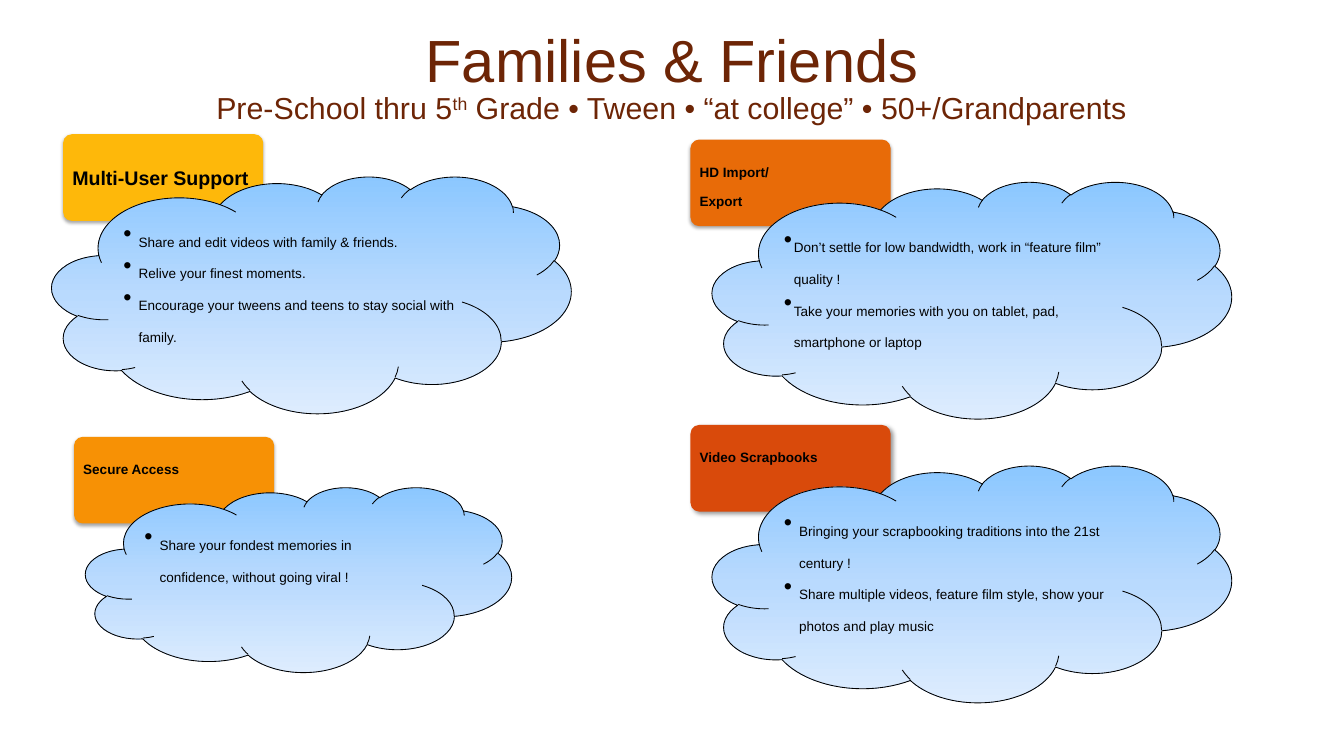
from copy import deepcopy

from lxml.etree import SubElement
from pptx import Presentation
from pptx.dml.color import RGBColor
from pptx.enum.shapes import MSO_SHAPE as Shape
from pptx.enum.text import MSO_ANCHOR as Anchor, MSO_AUTO_SIZE as AutoSize, PP_ALIGN as Align
from pptx.oxml.ns import qn
from pptx.util import Cm, Pt

FONT = "Arial"
BLACK, BROWN = "000000", "6D2506"
CLOUD_STOPS = ["8BC7FF", "B9DAFE", "DDECFE"]
CARD_SIZE = (6.05, 2.62)
LARGE, SMALL = (15.7, 7.16), (12.88, 5.59)
SUBSCRIPT, SUPERSCRIPT = -25, 30
SOFT = dict(blur=3.1, distance=1.8, angle=90, opacity=35)
ANGLED = dict(blur=4, distance=3, angle=45, opacity=40)

# Each title run: text, size in points, baseline shift in percent
TITLE = [
    ("Families & Friends\n", 51, 0),
    ("Pre-School thru 5", 26, 0),
    ("th", 26, SUPERSCRIPT),
    (" Grade • Tween • “at college” • 50+/Grandparents", 26, 0),
]

TOPICS = [
    dict(label="Multi-User Support", label_size=29, color="FEB80A", shadow=SOFT,
         card=(1.91, 4.06), cloud=(1.57, 5.33), cloud_size=LARGE, indent=0.46,
         points=["Share and edit videos with family & friends.",
                 "Relive your finest moments.",
                 "Encourage your tweens and teens to stay social with family."]),
    dict(label="Secure Access", label_size=20, color="F79105", shadow=SOFT,
         card=(2.24, 13.21), cloud=(2.59, 14.73), cloud_size=SMALL, indent=0.46,
         points=["Share your fondest memories in confidence, without going viral !"]),
    dict(label="HD Import/\nExport", label_size=20, color="E86B08", shadow=SOFT,
         card=(20.88, 4.22), cloud=(21.54, 5.49), cloud_size=LARGE, indent=0.3,
         points=["Don’t settle for low bandwidth, work in “feature film” quality !",
                 "Take your memories with you on tablet, pad, smartphone or laptop"]),
    dict(label="Video Scrapbooks", label_size=20, color="D94A0B", shadow=ANGLED,
         card=(20.88, 12.85), cloud=(21.54, 14.07), cloud_size=LARGE, indent=0.46,
         points=["Bringing your scrapbooking traditions into the 21st century !",
                 "Share multiple videos, feature film style, show your photos and play music"]),
]


def rgb(color):
    return RGBColor.from_string(color)


def add_text(paragraph, text, size=20, color=BLACK, bold=False, baseline=0):
    """Add runs to the paragraph, with a line break at each newline."""
    for index, line in enumerate(text.split("\n")):
        if index:
            paragraph.add_line_break()
        if not line:
            continue
        run = paragraph.add_run()
        run.text = line
        run.font.name, run.font.size, run.font.bold = FONT, Pt(size), bold
        run.font.color.rgb = rgb(color)
        if baseline:
            run._r.get_or_add_rPr().set("baseline", str(baseline * 1000))


def set_frame(shape, anchor, left, top, right, bottom):
    frame = shape.text_frame
    frame.word_wrap, frame.auto_size = True, AutoSize.NONE
    frame.vertical_anchor = anchor
    frame.margin_left, frame.margin_top = Cm(left), Cm(top)
    frame.margin_right, frame.margin_bottom = Cm(right), Cm(bottom)
    return frame


def add_bullet(paragraph, indent):
    properties = paragraph._p.get_or_add_pPr()
    properties.set("marL", str(Cm(indent)))
    properties.set("indent", str(-Cm(indent)))
    SubElement(properties, qn("a:buFont"), typeface=FONT)
    SubElement(properties, qn("a:buChar"), char="•")


def add_shadow(shape, blur, distance, angle, opacity):
    shape.shadow.inherit = False
    effects = shape._element.spPr.find(qn("a:effectLst"))
    shadow = SubElement(effects, qn("a:outerShdw"), blurRad=str(Pt(blur)),
                        dist=str(Pt(distance)), dir=str(angle * 60000), rotWithShape="0")
    color = SubElement(shadow, qn("a:srgbClr"), val=BLACK)
    SubElement(color, qn("a:alpha"), val=str(opacity * 1000))


def fill_gradient(shape, colors):
    """Fill from top to bottom with evenly spaced colours."""
    shape.fill.gradient()
    shape.fill.gradient_angle = 270
    stop_list = shape._element.spPr.find(".//" + qn("a:gsLst"))
    while len(stop_list) < len(colors):
        stop_list.append(deepcopy(stop_list[0]))
    for index, (stop, color) in enumerate(zip(shape.fill.gradient_stops, colors)):
        stop.position = index / (len(colors) - 1)
        stop.color.rgb = rgb(color)


def add_preset(slide, kind, position, size):
    return slide.shapes.add_shape(kind, *(Cm(length) for length in position + size))


def add_card(slide, topic):
    card = add_preset(slide, Shape.ROUNDED_RECTANGLE, topic["card"], CARD_SIZE)
    card.adjustments[0] = 0.1
    card.fill.solid()
    card.fill.fore_color.rgb = rgb(topic["color"])
    card.line.fill.background()
    add_shadow(card, **topic["shadow"])
    paragraph = set_frame(card, Anchor.TOP, 0.2, 0.2, 0.2, 0.08).paragraphs[0]
    paragraph.alignment, paragraph.line_spacing = Align.LEFT, 0.9
    add_text(paragraph, topic["label"], size=topic["label_size"], bold=True, baseline=SUBSCRIPT)


def add_cloud(slide, topic):
    cloud = add_preset(slide, Shape.CLOUD, topic["cloud"], topic["cloud_size"])
    cloud.shadow.inherit = False
    fill_gradient(cloud, CLOUD_STOPS)
    cloud.line.color.rgb, cloud.line.width = rgb(BLACK), Pt(0.75)
    frame = set_frame(cloud, Anchor.TOP, 0, 0.18, 0, 0.18)
    for index, point in enumerate(topic["points"]):
        paragraph = frame.add_paragraph() if index else frame.paragraphs[0]
        paragraph.alignment = Align.LEFT
        add_bullet(paragraph, topic["indent"])
        add_text(paragraph, point, baseline=SUBSCRIPT)


def main():
    presentation = Presentation()
    presentation.slide_width, presentation.slide_height = Cm(40.64), Cm(22.86)
    slide = presentation.slides.add_slide(presentation.slide_layouts[5])

    title = slide.shapes.title
    title.left, title.top, title.width, title.height = Cm(2.03), Cm(0.51), Cm(36.58), Cm(3.81)
    paragraph = set_frame(title, Anchor.MIDDLE, 0.36, 0.18, 0.36, 0.18).paragraphs[0]
    paragraph.alignment, paragraph.line_spacing = Align.CENTER, 0.85
    for text, size, baseline in TITLE:
        add_text(paragraph, text, size=size, color=BROWN, baseline=baseline)

    for topic in TOPICS:
        add_card(slide, topic)
        add_cloud(slide, topic)
    presentation.save("out.pptx")


if __name__ == "__main__":
    main()
